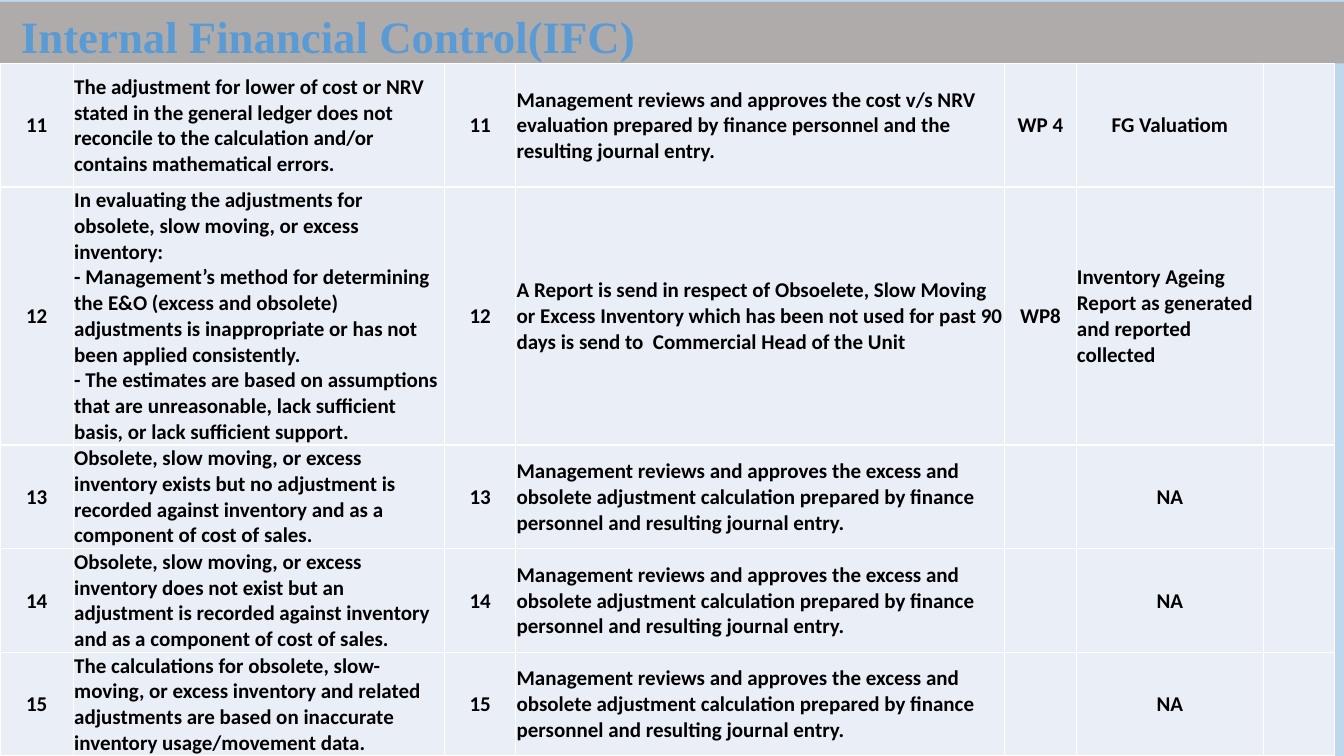
import pptx
import pptx.util
import pptx.dml.color
import pptx.enum.shapes
import pptx.enum.text
import pptx.oxml
import pptx.oxml.ns
from lxml import etree

Cm, Pt = pptx.util.Cm, pptx.util.Pt
ALIGN = pptx.enum.text.PP_ALIGN
MIDDLE = pptx.enum.text.MSO_ANCHOR.MIDDLE

# Content
TITLE = "Internal Financial Control(IFC)"
EXCESS_REVIEW = (
    "Management reviews and approves the excess and obsolete adjustment "
    "calculation prepared by finance personnel and resulting journal entry."
)
# risk number, risk, control, working paper, evidence
CONTROLS = [
    ("11", "The adjustment for lower of cost or NRV stated in the general ledger does not "
     "reconcile to the calculation and/or contains mathematical errors.",
     "Management reviews and approves the cost v/s NRV evaluation prepared by finance "
     "personnel and the resulting journal entry.", "WP 4", "FG Valuatiom"),
    ("12", "In evaluating the adjustments for obsolete, slow moving, or excess inventory:\n"
     "- Management’s method for determining the E&O (excess and obsolete) adjustments is "
     "inappropriate or has not been applied consistently.\n"
     "- The estimates are based on assumptions that are unreasonable, lack sufficient "
     "basis, or lack sufficient support.",
     "A Report is send in respect of Obsoelete, Slow Moving or Excess Inventory which has "
     "been not used for past 90 days is send to  Commercial Head of the Unit", "WP8",
     "Inventory Ageing Report as generated and reported collected"),
    ("13", "Obsolete, slow moving, or excess inventory exists but no adjustment is recorded "
     "against inventory and as a component of cost of sales.", EXCESS_REVIEW, "", "NA"),
    ("14", "Obsolete, slow moving, or excess inventory does not exist but an adjustment is "
     "recorded against inventory and as a component of cost of sales.",
     EXCESS_REVIEW, "", "NA"),
    ("15", "The calculations for obsolete, slow-moving, or excess inventory and related "
     "adjustments are based on inaccurate inventory usage/movement data.",
     EXCESS_REVIEW, "", "NA"),
]
COLUMN_WIDTHS = (1.85, 9.35, 1.8, 12.32, 1.8, 4.72, 1.8)
ROW_HEIGHTS = (3.1, 5.33, 2.29, 2.29, 2.29)
SENTENCE_LENGTH = 20  # longer texts are set to the left

THEME = {
    "page": "BDD7EE", "band": "AFABAB", "cell": "EAEFF7", "border": "FFFFFF",
    "title": {"name": "Times New Roman", "size": Pt(32), "bold": True, "color": "5B9BD5"},
    "body": {"name": "Calibri", "size": Pt(15), "bold": True, "color": "000000"},
}


def set_values(target, values):
    for name, value in values.items():
        setattr(target, name, value)


def paint(fill, color):
    fill.solid()
    fill.fore_color.rgb = pptx.dml.color.RGBColor.from_string(color)


def write(para, text, style):
    para.text = text
    for span in para.runs:
        set_values(span.font, {key: style[key] for key in ("name", "size", "bold")})
        paint(span.font.fill, style["color"])
    for line_break in para._p.findall(pptx.oxml.ns.qn("a:br")):
        props = etree.SubElement(line_break, pptx.oxml.ns.qn("a:rPr"))
        props.set("sz", str(int(style["size"].pt * 100)))


def add_borders(cell):
    props = cell._tc.get_or_add_tcPr()
    for index, side in enumerate(("lnL", "lnR", "lnT", "lnB")):
        props.insert(index, pptx.oxml.parse_xml(
            f'<a:{side} {pptx.oxml.ns.nsdecls("a")} w="{Pt(1)}"><a:solidFill>'
            f'<a:srgbClr val="{THEME["border"]}"/></a:solidFill></a:{side}>'))


def add_title_band(page):
    band = page.shapes.add_shape(pptx.enum.shapes.MSO_SHAPE.RECTANGLE,
                                 0, Cm(0.05), Cm(33.87), Cm(1.55))
    band.shadow.inherit = False
    paint(band.fill, THEME["band"])
    band.line.fill.background()
    set_values(band.text_frame, {
        "margin_left": Cm(0.53), "margin_top": Cm(0.12), "margin_right": 0,
        "margin_bottom": 0, "vertical_anchor": MIDDLE, "word_wrap": True})
    para = band.text_frame.paragraphs[0]
    para.alignment = ALIGN.LEFT
    write(para, TITLE, THEME["title"])


def add_control_table(page):
    table = page.shapes.add_table(
        len(ROW_HEIGHTS), len(COLUMN_WIDTHS), 0, Cm(1.61),
        Cm(sum(COLUMN_WIDTHS)), Cm(sum(ROW_HEIGHTS))).table
    set_values(table, {"first_row": False, "horz_banding": False})
    for column, width in zip(table.columns, COLUMN_WIDTHS):
        column.width = Cm(width)
    for row, height, control in zip(table.rows, ROW_HEIGHTS, CONTROLS):
        row.height = Cm(height)
        number, risk, response, paper, evidence = control
        texts = (number, risk, number, response, paper, evidence, "")
        for cell, text in zip(row.cells, texts):
            set_values(cell, {
                "margin_left": Cm(0.02), "margin_right": Cm(0.02),
                "margin_top": Cm(0.02), "margin_bottom": 0, "vertical_anchor": MIDDLE})
            paint(cell.fill, THEME["cell"])
            add_borders(cell)
            if text:
                para = cell.text_frame.paragraphs[0]
                para.alignment = ALIGN.LEFT if len(text) > SENTENCE_LENGTH else ALIGN.CENTER
                write(para, text, THEME["body"])


def main():
    deck = pptx.Presentation()
    set_values(deck, {"slide_width": Cm(33.87), "slide_height": Cm(19.05)})
    page = deck.slides.add_slide(deck.slide_layouts[6])
    paint(page.background.fill, THEME["page"])
    add_title_band(page)
    add_control_table(page)
    deck.save("out.pptx")


if __name__ == "__main__":
    main()
